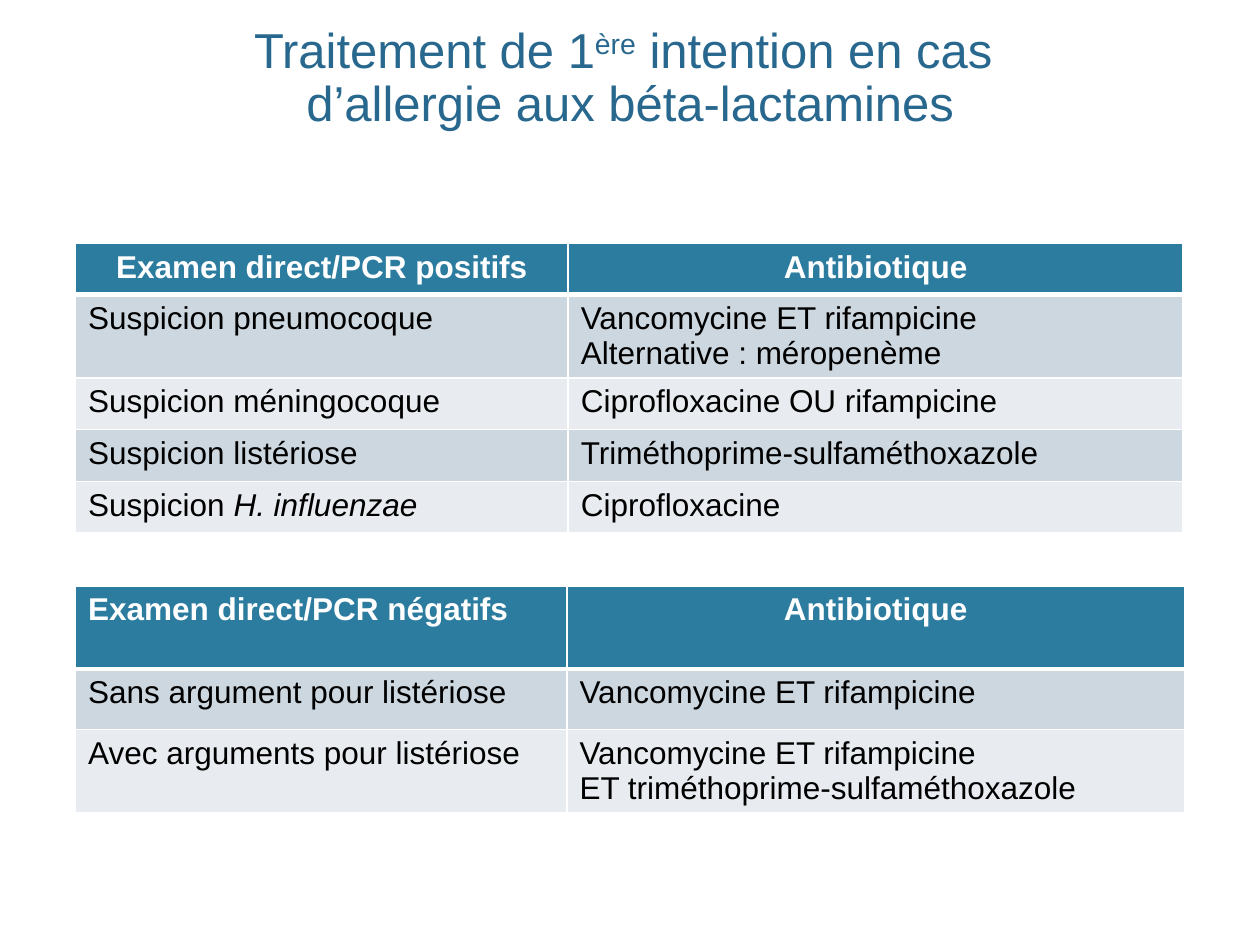
from lxml import etree
from pptx import Presentation
from pptx.dml.color import RGBColor
from pptx.enum.text import MSO_ANCHOR, PP_ALIGN
from pptx.oxml.ns import qn
from pptx.util import Inches, Pt

CENTER, LEFT = PP_ALIGN.CENTER, PP_ALIGN.LEFT
BOTTOM = MSO_ANCHOR.BOTTOM
FONT = "Arial"
COLORS = {
    "title": "28688E",
    "header": "2C7C9F",
    "band_dark": "CDD7DF",
    "band_light": "E8ECF0",
    "white": "FFFFFF",
    "black": "000000",
}

POSITIVE_ROWS = [
    ["Examen direct/PCR positifs", "Antibiotique"],
    ["Suspicion pneumocoque", "Vancomycine ET rifampicine\nAlternative : méropenème"],
    ["Suspicion méningocoque", "Ciprofloxacine OU rifampicine"],
    ["Suspicion listériose", "Triméthoprime-sulfaméthoxazole"],
    [("Suspicion ", "H. influenzae"), "Ciprofloxacine"],
]
NEGATIVE_ROWS = [
    ["Examen direct/PCR négatifs", "Antibiotique"],
    ["Sans argument pour listériose", "Vancomycine ET rifampicine"],
    ["Avec arguments pour listériose",
     "Vancomycine ET rifampicine\nET triméthoprime-sulfaméthoxazole"],
]


def rgb(name):
    return RGBColor.from_string(COLORS[name])


def add_run(p, text, size, color, bold=False, italic=False):
    r = p.add_run()
    r.text = text
    r.font.name = FONT
    r.font.size = Pt(size)
    r.font.bold = bold
    r.font.italic = italic
    r.font.color.rgb = rgb(color)
    return r


def set_borders(cell, top, bottom):
    tcPr = cell._tc.get_or_add_tcPr()
    for side, width in (("L", 1), ("R", 1), ("T", top), ("B", bottom)):
        ln = etree.SubElement(tcPr, qn(f"a:ln{side}"), w=str(Pt(width)))
        fill = etree.SubElement(ln, qn("a:solidFill"))
        etree.SubElement(fill, qn("a:srgbClr"), val=COLORS["white"])


def add_title(s, left, top, width, height):
    sp = s.shapes.title
    sp.left, sp.top, sp.width, sp.height = map(Inches, (left, top, width, height))
    tf = sp.text_frame
    tf.word_wrap = True
    tf.vertical_anchor = BOTTOM
    p = tf.paragraphs[0]
    p.alignment = CENTER
    p.line_spacing = 0.9
    add_run(p, "Traitement de 1", 28, "title")
    r = add_run(p, "ère", 28, "title")
    r._r.get_or_add_rPr().set("baseline", "30000")
    add_run(p, " intention en cas ", 28, "title")
    p.add_line_break()
    add_run(p, "d’allergie aux béta-lactamines", 28, "title")


def fill_cell(cell, content, row, align):
    header = row == 0
    set_borders(cell, 3 if row == 1 else 1, 3 if header else 1)
    band = "band_dark" if row % 2 else "band_light"
    cell.fill.solid()
    cell.fill.fore_color.rgb = rgb("header" if header else band)
    text, italic_text = content if isinstance(content, tuple) else (content, "")
    color = "white" if header else "black"
    tf = cell.text_frame
    for i, line in enumerate(text.split("\n")):
        p = tf.add_paragraph() if i else tf.paragraphs[0]
        p.alignment = align
        add_run(p, line, 18, color, bold=header)
    if italic_text:
        add_run(p, italic_text, 18, color, italic=True)


def add_treatment_table(s, left, top, col_widths, row_heights, rows, header_aligns):
    box = map(Inches, (left, top, sum(col_widths), sum(row_heights)))
    table = s.shapes.add_table(len(rows), len(col_widths), *box).table
    for col, width in zip(table.columns, col_widths):
        col.width = Inches(width)
    for i, (height, row) in enumerate(zip(row_heights, rows)):
        table.rows[i].height = Inches(height)
        for j, content in enumerate(row):
            align = LEFT if i else header_aligns[j]
            fill_cell(table.cell(i, j), content, i, align)


def main():
    prs = Presentation()
    prs.slide_width, prs.slide_height = Inches(10), Inches(7.5)
    s = prs.slides.add_slide(prs.slide_layouts[5])
    add_title(s, 0.6, 0.12, 8.8, 0.98)
    add_treatment_table(s, 0.6, 1.93, [3.91, 4.88], [0.41, 0.66, 0.41, 0.41, 0.41],
                        POSITIVE_ROWS, [CENTER, CENTER])
    add_treatment_table(s, 0.6, 4.65, [3.9, 4.9], [0.66, 0.48, 0.66],
                        NEGATIVE_ROWS, [LEFT, CENTER])
    prs.save("out.pptx")


if __name__ == "__main__":
    main()
